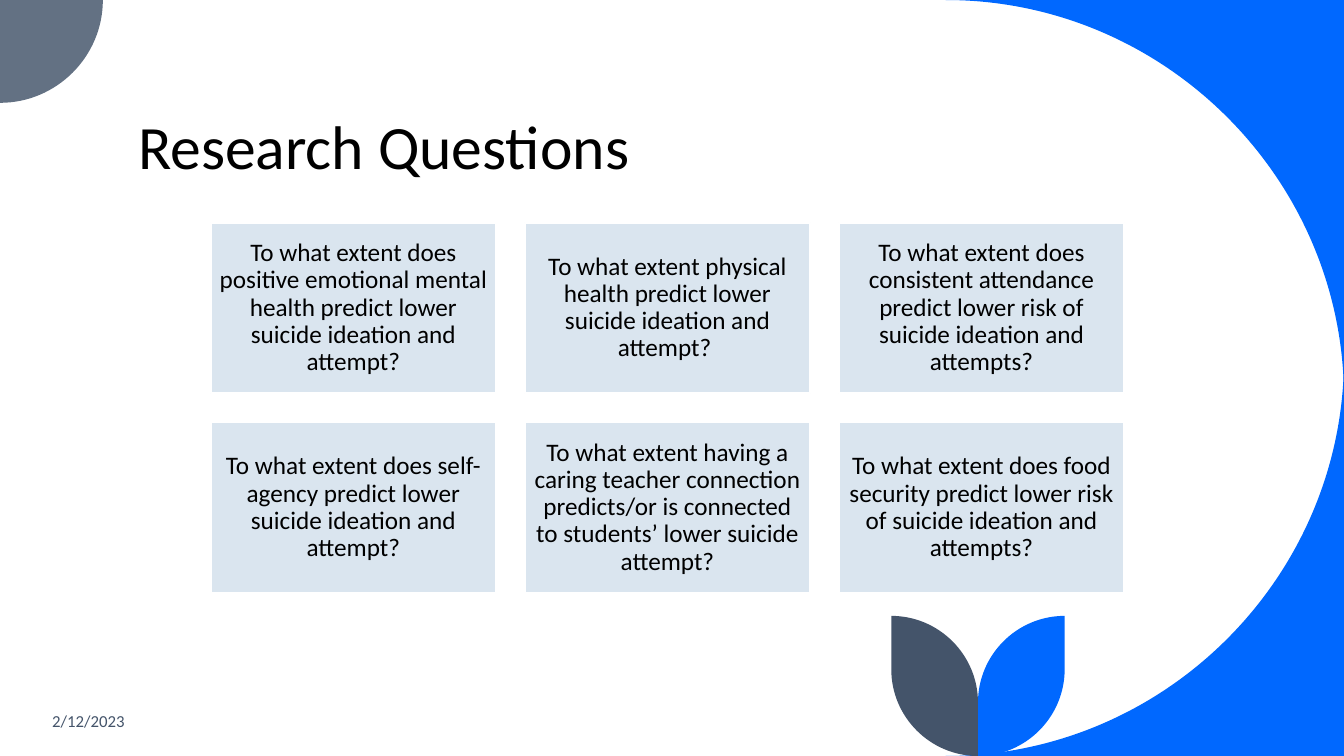
from dataclasses import dataclass

from pptx import Presentation
from pptx.dml.color import RGBColor
from pptx.enum.shapes import MSO_SHAPE as Preset
from pptx.enum.text import MSO_ANCHOR as Anchor
from pptx.enum.text import MSO_AUTO_SIZE as AutoSize
from pptx.enum.text import PP_ALIGN as Align
from pptx.oxml.ns import qn
from pptx.oxml.xmlchemy import OxmlElement
from pptx.util import Inches, Pt


@dataclass(frozen=True)
class Theme:
    font: str = "Calibri"
    blue: str = "0068FF"
    slate: str = "44546A"
    grey: str = "637183"
    card: str = "DAE5EF"
    white: str = "FFFFFF"
    black: str = "000000"
    title_size: int = 44
    card_size: int = 18
    date_size: int = 12


THEME = Theme()
WIDTH, HEIGHT = 13.33, 7.5
ROUNDNESS = 0.55  # control distance that bends a cubic curve into a quarter circle

QUESTIONS = [
    "To what extent does positive emotional mental health predict lower suicide ideation and attempt?",
    "To what extent physical health predict lower suicide ideation and attempt? ",
    "To what extent does consistent attendance predict lower risk of suicide ideation and attempts?",
    "To what extent does self-agency predict lower suicide ideation and attempt?",
    "To what extent having a caring teacher connection predicts/or is connected to "
    "students’ lower suicide attempt?",
    "To what extent does food security predict lower risk of suicide ideation and attempts?",
]


def rgb(code):
    return RGBColor.from_string(code)


def quarter(start, corner, end):
    """Two control points and the end of a quarter circle that bulges to a corner."""
    def toward_corner(point):
        return tuple(p + ROUNDNESS * (c - p) for p, c in zip(point, corner))
    return [toward_corner(start), toward_corner(end), end]


def add_outline(slide, start, steps, color):
    """Each step is a list: one point for a line, three for a curve."""
    points = [(Inches(x), Inches(y)) for step in steps for x, y in step]
    builder = slide.shapes.build_freeform(*(Inches(value) for value in start))
    builder.add_line_segments(points, close=True)
    outline = builder.convert_to_shape()
    outline.shadow.inherit = False
    outline.fill.solid()
    outline.fill.fore_color.rgb = rgb(color)
    outline.line.fill.background()

    # Join the three segments of every curved step into one curve
    segments = iter(list(outline.element.iter(qn("a:lnTo"))))
    for step in steps:
        first, *others = [next(segments) for _ in step]
        if others:
            curve = OxmlElement("a:cubicBezTo")
            first.addprevious(curve)
            for segment in (first, *others):
                curve.append(segment[0])
                segment.getparent().remove(segment)


def write(frame, text, size, color, align=Align.LEFT, spacing=1.0, **frame_format):
    settings = {"word_wrap": True, "auto_size": AutoSize.NONE, **frame_format}
    for name, value in settings.items():
        setattr(frame, name, value)
    frame.text = text
    paragraph = frame.paragraphs[0]
    paragraph.alignment = align
    paragraph.line_spacing = spacing
    font = paragraph.runs[0].font
    for name, value in {"name": THEME.font, "size": Pt(size)}.items():
        setattr(font, name, value)
    font.color.rgb = rgb(color)


def add_corners(slide):
    radius, left = 3.95, 9.38
    # Blue sweep on the right: the lower half mirrors the upper one
    for edge, middle in ((0, radius), (HEIGHT, HEIGHT - radius)):
        corner, tip = (WIDTH, edge), (left, edge)
        add_outline(slide, corner, [[tip], quarter(tip, corner, (WIDTH, middle))], THEME.blue)

    # Grey quarter circle at the top left
    size = 1.02
    right, bottom = (size, 0), (0, size)
    add_outline(slide, (0, 0), [[right], quarter(right, (size, size), bottom)], THEME.grey)


def add_leaves(slide):
    stem, top, radius = 9.7, 6.11, 0.86
    inner, base = (stem, top + radius), (stem, HEIGHT)
    for side, color in ((stem + radius, THEME.blue), (stem - radius, THEME.slate)):
        tip, shoulder = (side, top), (side, HEIGHT - radius)
        steps = [[shoulder], quarter(shoulder, (side, HEIGHT), base),
                 [inner], quarter(inner, (stem, top), tip)]
        add_outline(slide, tip, steps, color)


def add_title(slide, text):
    title = slide.shapes.title
    box = {"left": 1.27, "top": 0.41, "width": 10.69, "height": 1.45}
    for name, value in box.items():
        setattr(title, name, Inches(value))
    write(title.text_frame, text, THEME.title_size, THEME.black,
          spacing=0.9, vertical_anchor=Anchor.BOTTOM)


def add_card(slide, left, top, width, height, question):
    card = slide.shapes.add_shape(
        Preset.RECTANGLE, Inches(left), Inches(top), Inches(width), Inches(height))
    card.shadow.inherit = False
    card.fill.solid()
    card.fill.fore_color.rgb = rgb(THEME.card)
    card.line.color.rgb = rgb(THEME.white)
    card.line.width = Pt(1.5)
    sides = ("left", "top", "right", "bottom")
    margins = {f"margin_{side}": Inches(0.07) for side in sides}
    write(card.text_frame, question, THEME.card_size, THEME.black, Align.CENTER,
          spacing=0.9, vertical_anchor=Anchor.MIDDLE, **margins)


def add_question_grid(slide):
    left, right, top, columns = 2.09, 11.15, 2.21, 3
    width, height, row_gap = 2.83, 1.69, 0.29
    column_step = (right - left - width) / (columns - 1)
    for index, question in enumerate(QUESTIONS):
        row, column = divmod(index, columns)
        add_card(slide, left + column * column_step, top + row * (height + row_gap),
                 width, height, question)


def add_date(slide, text):
    date = slide.shapes.add_textbox(Inches(0.42), Inches(6.95), Inches(3), Inches(0.4))
    write(date.text_frame, text, THEME.date_size, THEME.slate, vertical_anchor=Anchor.MIDDLE)


def main():
    deck = Presentation()
    deck.slide_width, deck.slide_height = Inches(WIDTH), Inches(HEIGHT)
    title_only = deck.slide_layouts[5]
    slide = deck.slides.add_slide(title_only)

    # Decoration
    add_corners(slide)
    add_leaves(slide)

    # Content
    add_title(slide, "Research Questions")
    add_question_grid(slide)
    add_date(slide, "2/12/2023")

    deck.save("out.pptx")


if __name__ == "__main__":
    main()
